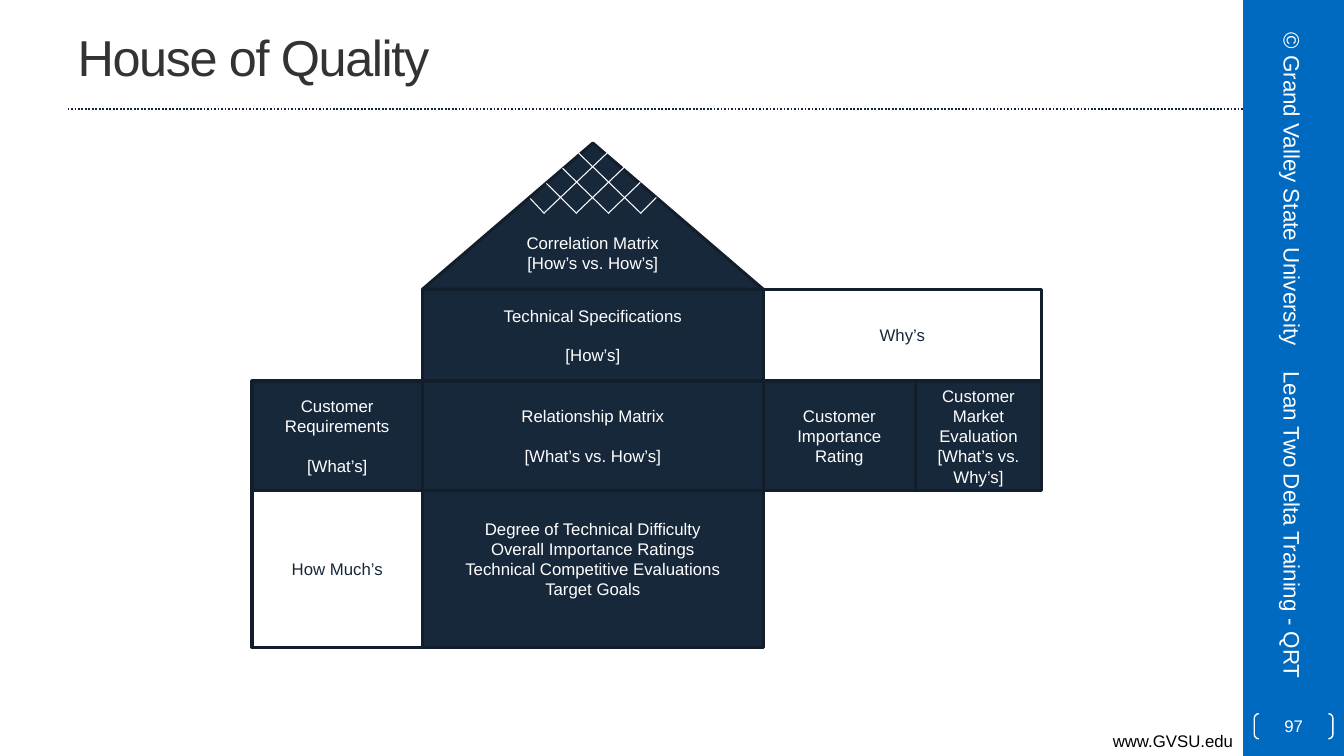
from pptx import Presentation
from pptx.dml.color import RGBColor
from pptx.enum.dml import MSO_LINE
from pptx.enum.shapes import MSO_CONNECTOR, MSO_SHAPE
from pptx.enum.text import MSO_ANCHOR, PP_ALIGN
from pptx.oxml.ns import qn
from pptx.util import Inches, Pt
from lxml.etree import SubElement

NAVY = RGBColor(0x18, 0x28, 0x3B)
EDGE = RGBColor(0x12, 0x1E, 0x2C)
RULE = RGBColor(0x17, 0x27, 0x3B)
BLUE = RGBColor(0x00, 0x69, 0xC0)
GRAY = RGBColor(0x33, 0x33, 0x33)
WHITE = RGBColor(0xFF, 0xFF, 0xFF)
BLACK = RGBColor(0, 0, 0)

TITLE = "House of Quality"
SITE = "www.GVSU.edu"
PAGE = "97"
SIDE_TEXTS = [
    (5.03, "Lean Two Delta Training - QRT", PP_ALIGN.LEFT),
    (1.61, "© Grand Valley State University", PP_ALIGN.CENTER),
]
COLS = [2.5, 4.19, 7.57, 9.08, 10.33]
ROWS = [1.42, 2.87, 3.78, 4.87, 6.42]
GAP = 14
ROOMS = [
    (MSO_SHAPE.ISOSCELES_TRIANGLE, 1, 2, 0, NAVY, ["Correlation Matrix [How’s vs. How’s]"], 0, 0.05),
    (MSO_SHAPE.RECTANGLE, 1, 2, 1, NAVY, ["Technical Specifications", "[How’s]"], GAP, 0.05),
    (MSO_SHAPE.RECTANGLE, 1, 2, 2, NAVY, ["Relationship Matrix", "[What’s vs. How’s]"], GAP, 0.05),
    (MSO_SHAPE.RECTANGLE, 1, 2, 3, NAVY, [
        "Degree of Technical Difficulty", "Overall Importance Ratings",
        "Technical Competitive Evaluations", "Target Goals"], 0, 0.25),
    (MSO_SHAPE.RECTANGLE, 0, 1, 2, NAVY, ["Customer Requirements", "[What’s]"], GAP, 0.05),
    (MSO_SHAPE.RECTANGLE, 0, 1, 3, WHITE, ["How Much’s"], 0, 0.05),
    (MSO_SHAPE.RECTANGLE, 2, 4, 1, WHITE, ["Why’s"], 0, 0.05),
    (MSO_SHAPE.RECTANGLE, 2, 3, 2, NAVY, ["Customer Importance Rating"], 0, 0.05),
    (MSO_SHAPE.RECTANGLE, 3, 4, 2, NAVY, ["Customer Market Evaluation", "[What’s vs. Why’s]"], 0, 0.05),
]

prs = Presentation()
prs.slide_width, prs.slide_height = Inches(13.33), Inches(7.5)
s = prs.slides.add_slide(prs.slide_layouts[5])


def write(sp, texts, size, color, align, gap=0):
    tf = sp.text_frame
    tf.word_wrap = True
    tf.vertical_anchor = MSO_ANCHOR.MIDDLE
    for i, text in enumerate(texts):
        p = tf.paragraphs[0] if i == 0 else tf.add_paragraph()
        p.text = text
        p.alignment = align
        if i and gap:
            p.space_before = Pt(gap)
        p.font.name, p.font.size = "Arial", Pt(size)
        p.font.color.rgb = color
    return tf


def add_line(x1, y1, x2, y2, color, width):
    line = s.shapes.add_connector(
        MSO_CONNECTOR.STRAIGHT, Inches(x1), Inches(y1), Inches(x2), Inches(y2))
    line.line.color.rgb = color
    line.line.width = Pt(width)
    SubElement(line._element.spPr, qn("a:effectLst"))
    return line


def add_box(kind, x, y, w, h):
    sp = s.shapes.add_shape(kind, Inches(x), Inches(y), Inches(w), Inches(h))
    sp.shadow.inherit = False
    return sp


def add_text(x, y, w, h, text, size, color, align):
    sp = s.shapes.add_textbox(Inches(x), Inches(y), Inches(w), Inches(h))
    write(sp, [text], size, color, align)
    return sp


band = add_box(MSO_SHAPE.RECTANGLE, 12.33, 0, 1, 7.5)
band.fill.solid()
band.fill.fore_color.rgb = BLUE
band.line.fill.background()

add_line(0.67, 1.08, 12.33, 1.08, RULE, 1.25).line.dash_style = MSO_LINE.ROUND_DOT
add_text(0, 7.2, 12.33, 0.3, SITE, 12, BLACK, PP_ALIGN.RIGHT)

title = s.shapes.title
title.left, title.top = Inches(0.67), Inches(0.03)
title.width, title.height = Inches(11.11), Inches(1.05)
tf = write(title, [TITLE], 36, GRAY, PP_ALIGN.LEFT)
tf.paragraphs[0].runs[0].font._element.set("spc", "-100")

for kind, first, last, row, fill, texts, gap, bottom in ROOMS:
    x, y = COLS[first], ROWS[row]
    room = add_box(kind, x, y, COLS[last] - x, ROWS[row + 1] - y)
    room.fill.solid()
    room.fill.fore_color.rgb = fill
    room.line.color.rgb = EDGE
    room.line.width = Pt(2.25)
    color = NAVY if fill == WHITE else WHITE
    write(room, texts, 12, color, PP_ALIGN.CENTER, gap).margin_bottom = Inches(bottom)

for i in range(4):
    across, along, down = 0.32 * i, 0.16 * i, 0.15 * i
    add_line(5.4 + across, 2.11, 6.03 + along, 1.51 + down, WHITE, 0.75)
    add_line(5.74 - along, 1.52 + down, 6.36 - across, 2.12, WHITE, 0.75)

for y, text, align in SIDE_TEXTS:
    add_text(11.11, y, 3.42, 0.53, text, 16, WHITE, align).rotation = 90

page = add_box(MSO_SHAPE.DOUBLE_BRACKET, 12.44, 7.08, 0.78, 0.25)
page.adjustments[0] = 0.179
page.fill.background()
page.line.color.rgb = WHITE
page.line.width = Pt(1)
tf = write(page, [PAGE], 12, WHITE, PP_ALIGN.CENTER)
tf.margin_left = tf.margin_right = tf.margin_top = tf.margin_bottom = 0

prs.save("out.pptx")
